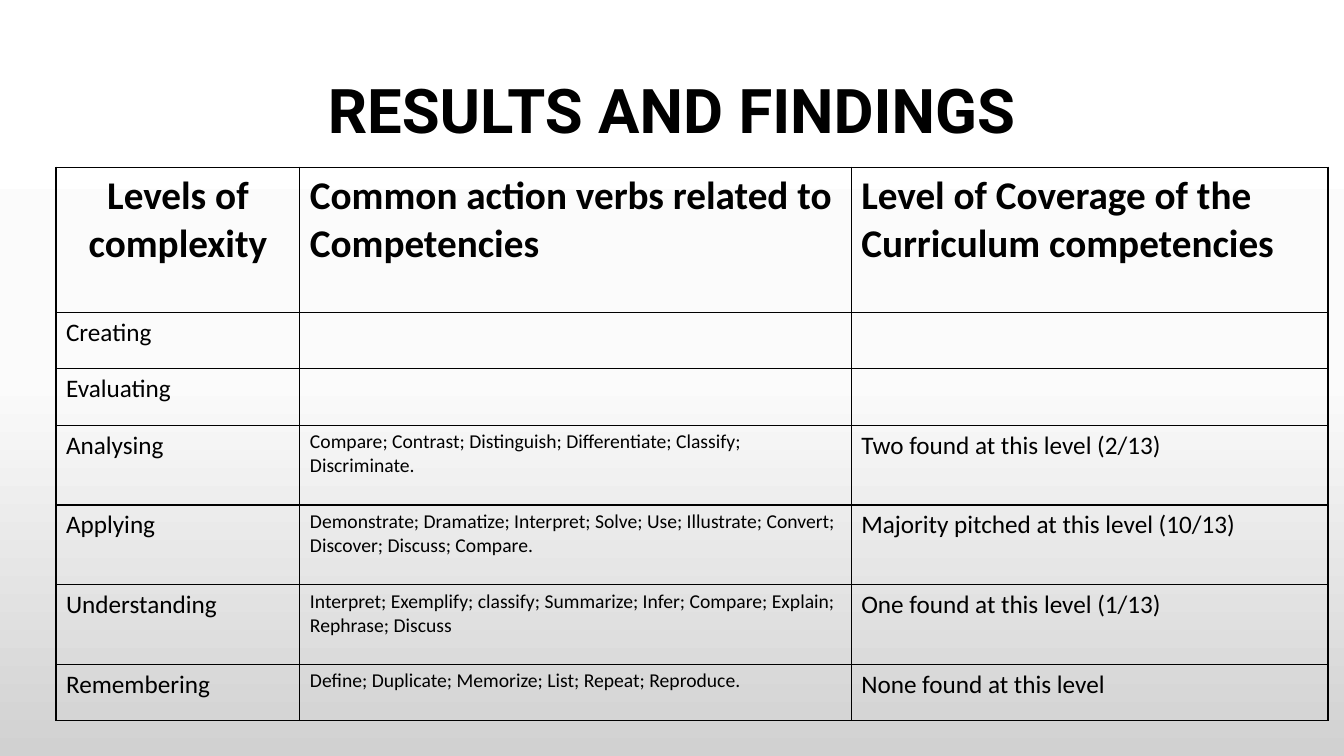
from pptx import Presentation, util as u
from pptx.dml.color import RGBColor
from pptx.enum import text as t
from pptx.oxml import parse_xml
from pptx.oxml.ns import nsdecls

Pt = u.Pt
BLACK = "000000"
BACKDROP = [(0, "FFFFFF"), (50, "FBFBFB"), (100, "D1D1D1")]
COLUMN_WIDTHS = [174.24, 393.84, 340.56]
ROW_HEIGHTS = [103.68, 40.32, 40.32, 56.88, 56.88, 56.88, 40.32]
COLUMN_SIZES = [18, 14, 18]
HEADINGS = [
    "Levels of complexity",
    "Common action verbs related to Competencies",
    "Level of Coverage of the Curriculum competencies",
]
LEVELS = [
    ("Creating", "", ""),
    ("Evaluating", "", ""),
    ("Analysing",
     "Compare; Contrast; Distinguish; Differentiate; Classify; Discriminate.",
     "Two found at this level (2/13)"),
    ("Applying",
     "Demonstrate; Dramatize; Interpret; Solve; Use; Illustrate; Convert; "
     "Discover; Discuss; Compare.",
     "Majority pitched at this level (10/13)"),
    ("Understanding",
     "Interpret; Exemplify; classify; Summarize; Infer; Compare; Explain; "
     "Rephrase; Discuss",
     "One found at this level (1/13)"),
    ("Remembering",
     "Define; Duplicate; Memorize; List; Repeat; Reproduce.",
     "None found at this level"),
]


def color(hex_string):
    return RGBColor.from_string(hex_string)


def write(frame, words, size=18, font="Calibri", bold=False, fill=BLACK,
          align=t.PP_ALIGN.LEFT, spacing=None):
    """Put one formatted paragraph into a text frame."""
    frame.word_wrap = True
    para = frame.paragraphs[0]
    para.alignment = align
    para.line_spacing = spacing
    span = para.add_run()
    span.text = words
    span.font.size = Pt(size)
    span.font.name = font
    span.font.bold = bold
    span.font.color.rgb = color(fill)


def paint_background(page, stops):
    fill = page.background.fill
    fill.gradient()
    fill.gradient_angle = 270
    stop_list = page.element.xpath(".//p:bg//a:gsLst")[0]
    for stop in list(stop_list):
        stop_list.remove(stop)
    for percent, hex_string in stops:
        stop_list.append(parse_xml(
            f'<a:gs {nsdecls("a")} pos="{percent * 1000}">'
            f'<a:srgbClr val="{hex_string}"/></a:gs>'))


def outline(cell, hex_string=BLACK, width=1):
    """Draw all four borders of a table cell."""
    properties = cell._tc.get_or_add_tcPr()
    for index, side in enumerate("LRTB"):
        properties.insert(index, parse_xml(
            f'<a:ln{side} {nsdecls("a")} w="{Pt(width)}"><a:solidFill>'
            f'<a:srgbClr val="{hex_string}"/></a:solidFill></a:ln{side}>'))


def add_title(page, left, top, width, height):
    box = page.shapes.add_textbox(Pt(left), Pt(top), Pt(width), Pt(height))
    frame = box.text_frame
    frame.vertical_anchor = t.MSO_ANCHOR.MIDDLE
    write(frame, "RESULTS AND FINDINGS", size=44, font="Roboto", bold=True,
          align=t.PP_ALIGN.CENTER, spacing=0.9)


def add_levels_table(page, left, top):
    rows = [HEADINGS, *LEVELS]
    table = page.shapes.add_table(
        len(rows), len(HEADINGS), Pt(left), Pt(top),
        Pt(sum(COLUMN_WIDTHS)), Pt(sum(ROW_HEIGHTS))).table
    table.first_row = table.horz_banding = False
    for column, width in zip(table.columns, COLUMN_WIDTHS):
        column.width = Pt(width)
    for r, (row, height, entries) in enumerate(
            zip(table.rows, ROW_HEIGHTS, rows)):
        row.height = Pt(height)
        heading = r == 0
        for c, (cell, words) in enumerate(zip(row.cells, entries)):
            cell.fill.background()
            outline(cell)
            if words:
                centred = heading and c == 0
                write(cell.text_frame, words, bold=heading,
                      size=28 if heading else COLUMN_SIZES[c],
                      align=t.PP_ALIGN.CENTER if centred else t.PP_ALIGN.LEFT)


def main():
    deck = Presentation()
    deck.slide_width, deck.slide_height = Pt(960), Pt(540)
    page = deck.slides.add_slide(deck.slide_layouts[6])
    paint_background(page, BACKDROP)
    add_title(page, 66, 28.8, 828, 104.4)
    add_levels_table(page, 40, 119.5)
    deck.save("out.pptx")


if __name__ == "__main__":
    main()
